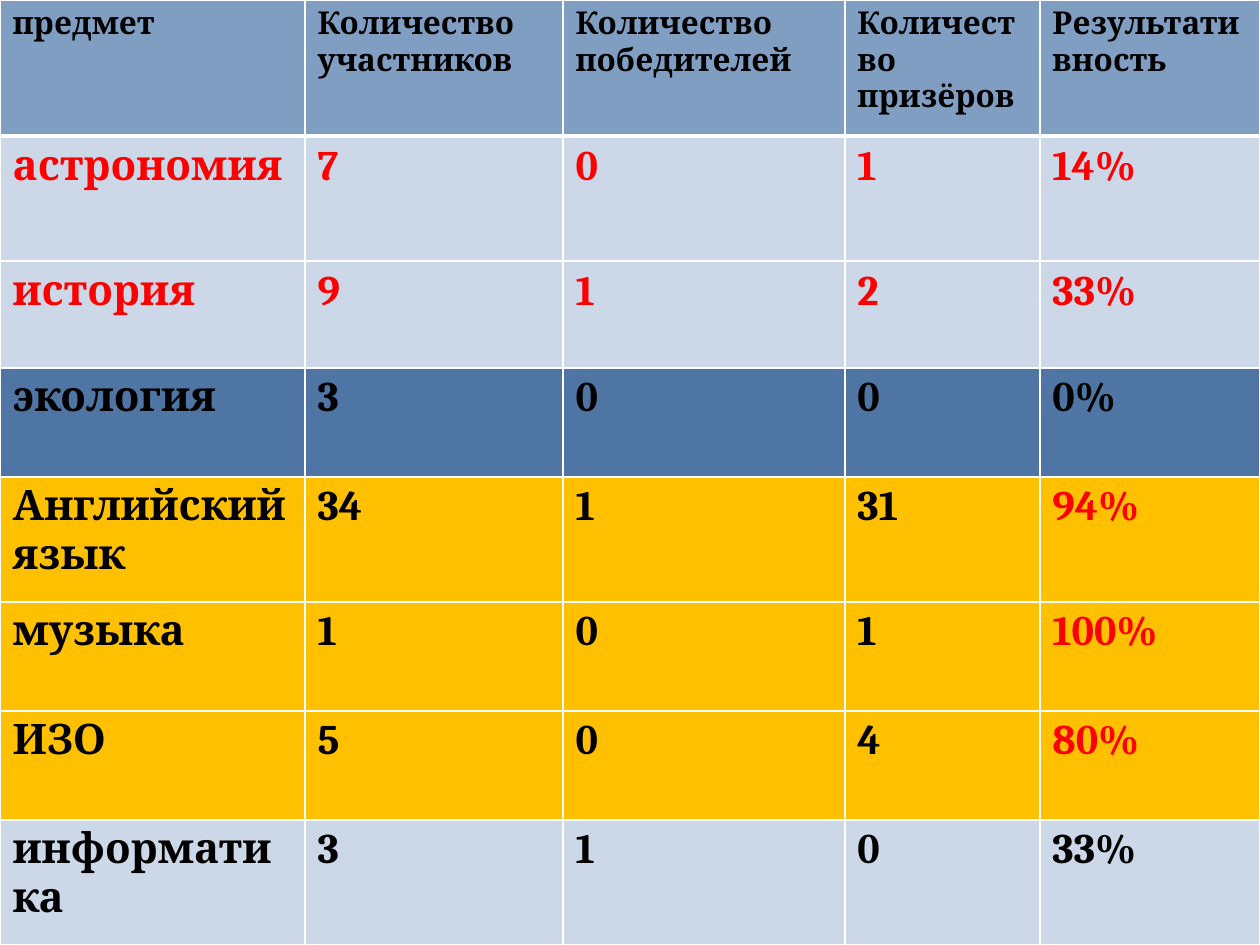
"""Build a slide with a table of school olympiad results by subject."""
import lxml.etree
import pptx
import pptx.dml.color
import pptx.oxml.ns
import pptx.util

PX = 914400 // 126
COLORS = {
    "back": "000000",
    "text": "000000",
    "mark": "FF0000",
    "line": "FFFFFF",
    "head": "809EC2",
    "pale": "CCD8E7",
    "deep": "4E75A3",
    "gold": "FFC000",
}
WIDTHS = [305, 258, 282, 195, 220]
HEIGHTS = [136, 125, 107, 109, 125, 109, 109, 125]
HEADS = ["предмет", "Количество участников", "Количество победителей",
         "Количество\nпризёров", "Результативность"]
ROWS = [
    ("head", "text", "text", HEADS),
    ("pale", "mark", "mark", ["астрономия", "7", "0", "1", "14%"]),
    ("pale", "mark", "mark", ["история", "9", "1", "2", "33%"]),
    ("deep", "text", "text", ["экология", "3", "0", "0", "0%"]),
    ("gold", "text", "mark", ["Английский язык", "34", "1", "31", "94%"]),
    ("gold", "text", "mark", ["музыка", "1", "0", "1", "100%"]),
    ("gold", "text", "mark", ["ИЗО", "5", "0", "4", "80%"]),
    ("pale", "text", "text", ["информатика", "3", "1", "0", "33%"]),
]


def color(name):
    return pptx.dml.color.RGBColor.from_string(COLORS[name])


def border(cell, side, width):
    qn = pptx.oxml.ns.qn
    props = cell._tc.get_or_add_tcPr()
    line = lxml.etree.SubElement(props, qn(f"a:ln{side}"), w=str(pptx.util.Pt(width)))
    fill = lxml.etree.SubElement(line, qn("a:solidFill"))
    lxml.etree.SubElement(fill, qn("a:srgbClr"), val=COLORS["line"])


deck = pptx.Presentation()
deck.slide_width = 1260 * PX
deck.slide_height = 945 * PX
slide = deck.slides.add_slide(deck.slide_layouts[6])
slide.background.fill.solid()
slide.background.fill.fore_color.rgb = color("back")

frame = slide.shapes.add_table(len(ROWS), len(WIDTHS), 0, 0, sum(WIDTHS) * PX, sum(HEIGHTS) * PX)
table = frame.table
for col, width in zip(table.columns, WIDTHS):
    col.width = width * PX
for row, height in zip(table.rows, HEIGHTS):
    row.height = height * PX

for r, (fill, ink, last, texts) in enumerate(ROWS):
    for c, text in enumerate(texts):
        cell = table.cell(r, c)
        for side in "LRTB":
            thick = (r, side) in [(0, "B"), (1, "T")]
            border(cell, side, 3 if thick else 1)
        cell.fill.solid()
        cell.fill.fore_color.rgb = color(fill)
        cell.text = text
        for para in cell.text_frame.paragraphs:
            para.font.name = "Cambria"
            para.font.size = pptx.util.Pt(18 if r == 0 else 24)
            para.font.bold = True
            para.font.color.rgb = color(last if c == len(texts) - 1 else ink)

deck.save("out.pptx")
